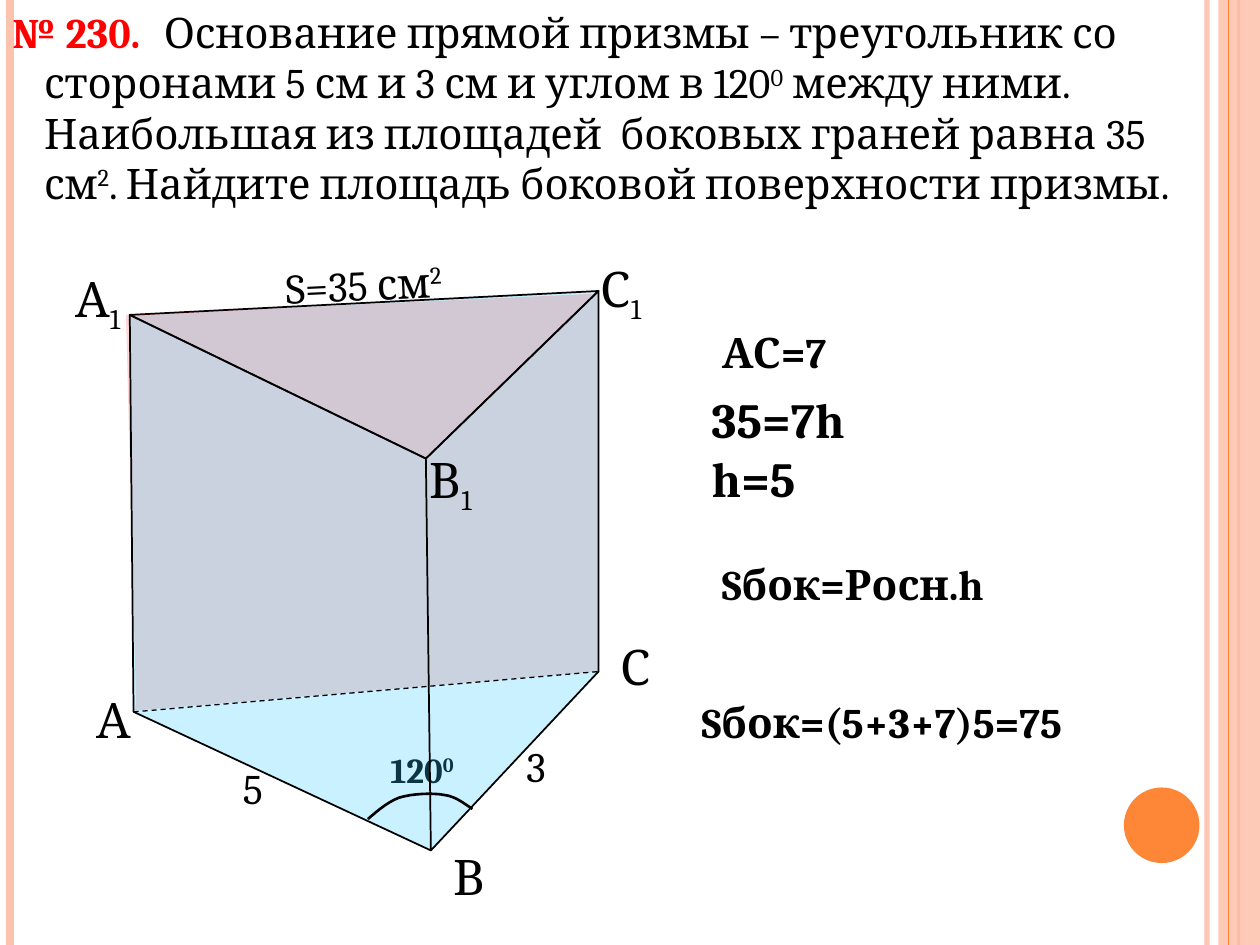
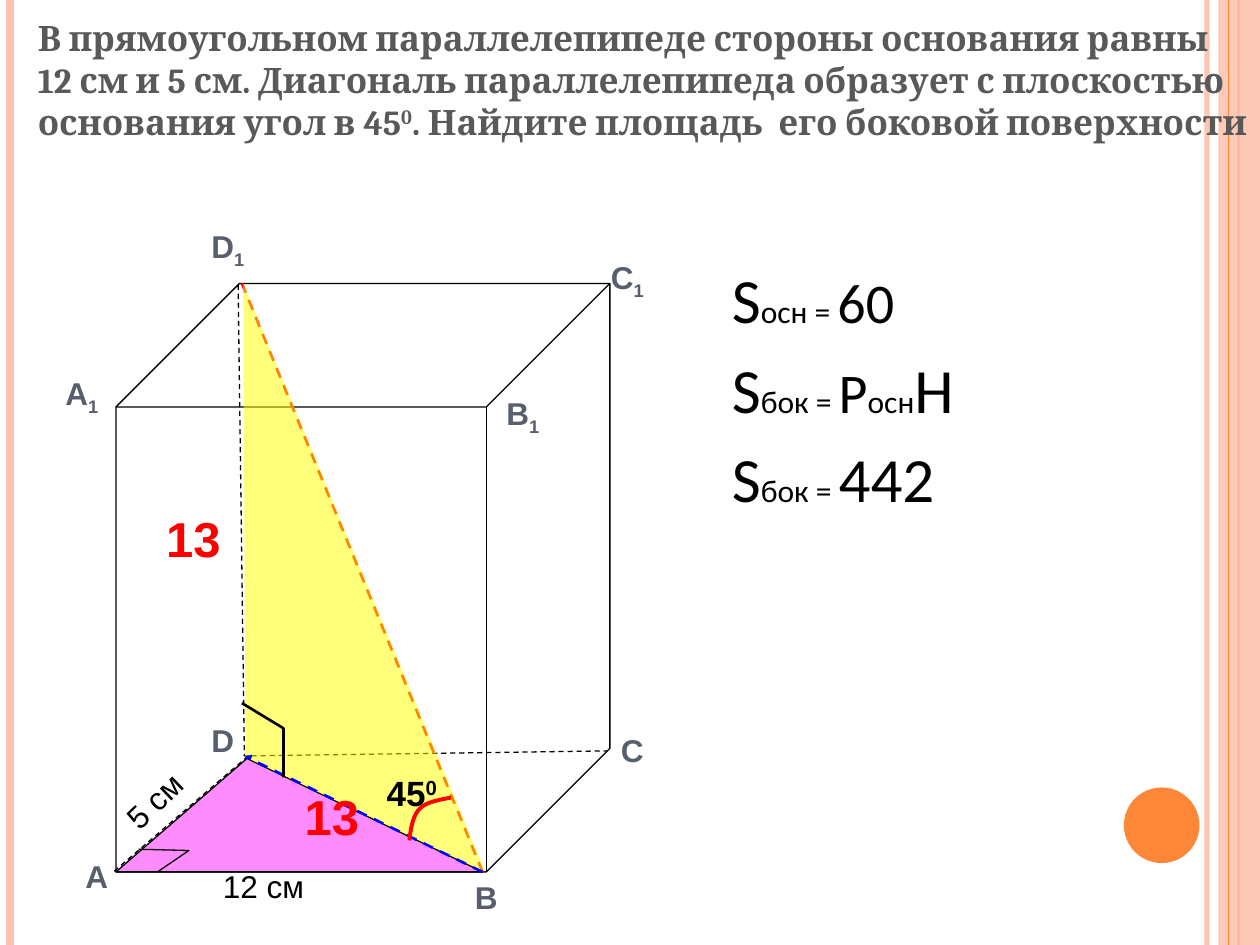
"""Builds two geometry problem slides about the lateral area of prisms."""
from dataclasses import dataclass

import pptx
import pptx.dml.color
import pptx.enum.dml
import pptx.enum.shapes
import pptx.enum.text
import pptx.oxml
import pptx.oxml.ns
import pptx.util

Inches = pptx.util.Inches
SHAPE = pptx.enum.shapes.MSO_SHAPE
SUP, SUB = 30, -25


@dataclass(frozen=True)
class Theme:
    serif: str = "Cambria"
    sans: str = "Arial"
    formula: str = "Calibri"
    ink: str = "000000"
    heading: str = "595959"
    vertex: str = "575F6D"
    accent: str = "FE8637"
    band: str = "FEC3AE"
    red: str = "FF0000"
    blue: str = "0000FF"
    sky: str = "33CCFF"
    magenta: str = "FF00FF"
    yellow: str = "FFFF00"
    small: int = 18
    medium: int = 20
    normal: int = 24
    large: int = 28
    value: int = 32
    symbol: int = 36
    hairline: float = 0.75
    outline: float = 1
    bold_line: float = 1.5
    arc_line: float = 2.25


def bezier(*points, steps=8):
    """Return points along a chain of cubic curves."""
    curve = [points[0]]
    for first in range(0, len(points) - 1, 3):
        a, b, c, d = points[first:first + 4]
        for step in range(1, steps + 1):
            t = step / steps
            weights = ((1 - t) ** 3, 3 * t * (1 - t) ** 2, 3 * t * t * (1 - t), t ** 3)
            curve.append(tuple(sum(w * p[axis] for w, p in zip(weights, (a, b, c, d)))
                               for axis in (0, 1)))
    return curve


class Deck:
    """Holds the theme and the current slide and draws its elements."""

    def __init__(self, theme):
        self.theme = theme
        self.show = pptx.Presentation()
        self.show.slide_width, self.show.slide_height = Inches(10), Inches(7.5)
        self.layout = self.show.slide_layouts.get_by_name("Title Only")
        self.slide = None

    def new_slide(self):
        self.slide = self.show.slides.add_slide(self.layout)

    def paint(self, fill, colour, alpha):
        fill.solid()
        fill.fore_color.rgb = pptx.dml.color.RGBColor.from_string(colour)
        if alpha is not None:
            rgb = fill._xPr.find(".//" + pptx.oxml.ns.qn("a:srgbClr"))
            rgb.append(pptx.oxml.parse_xml(
                f'<a:alpha {pptx.oxml.ns.nsdecls("a")} val="{alpha * 1000}"/>'))

    def style(self, shape, fill=None, alpha=None, line=None, width=None, dash=False):
        shape.shadow.inherit = False
        if fill:
            self.paint(shape.fill, fill, alpha)
        else:
            shape.fill.background()
        self.style_line(shape.line, line, width, dash)
        return shape

    def style_line(self, stroke, colour, width, dash=False, alpha=None):
        if not colour:
            stroke.fill.background()
            return
        self.paint(stroke.fill, colour, alpha)
        stroke.width = pptx.util.Pt(width)
        if dash:
            stroke.dash_style = pptx.enum.dml.MSO_LINE.DASH

    def preset(self, kind, at, **look):
        return self.style(self.slide.shapes.add_shape(kind, *map(Inches, at)), **look)

    def line(self, start, end, colour, width, dash=False, alpha=None):
        connector = self.slide.shapes.add_connector(
            pptx.enum.shapes.MSO_CONNECTOR.STRAIGHT, *map(Inches, start + end))
        self.style_line(connector.line, colour, width, dash, alpha)
        connector.element.spPr.append(
            pptx.oxml.parse_xml(f'<a:effectLst {pptx.oxml.ns.nsdecls("a")}/>'))
        return connector

    def outline(self, points, close=False, **look):
        corners = [(Inches(x), Inches(y)) for x, y in points]
        builder = self.slide.shapes.build_freeform(*corners[0])
        builder.add_line_segments(corners[1:], close=close)
        return self.style(builder.convert_to_shape(), **look)

    def compose(self, paragraph, runs, size, font, colour, bold):
        paragraph.font.name = font
        paragraph.font.size = pptx.util.Pt(size)
        paragraph.font.bold = bold
        paragraph.font.color.rgb = pptx.dml.color.RGBColor.from_string(colour)
        for words, *shift in runs:
            run = paragraph.add_run()
            run.text = words
            if shift:
                run.font._element.set("baseline", str(shift[0] * 1000))

    def title(self, at, runs, size, colour, bold=False, indent=0):
        heading = self.slide.shapes.title
        heading.left, heading.top, heading.width, heading.height = map(Inches, at)
        frame = heading.text_frame
        frame.word_wrap = True
        frame.auto_size = pptx.enum.text.MSO_AUTO_SIZE.NONE
        frame.vertical_anchor = pptx.enum.text.MSO_ANCHOR.TOP
        paragraph = frame.paragraphs[0]
        paragraph.alignment = pptx.enum.text.PP_ALIGN.LEFT
        self.compose(paragraph, runs, size, self.theme.serif, colour, bold)
        paragraph._p.get_or_add_pPr().set("indent", str(Inches(indent)))

    def text(self, at, *lines, size, font=None, colour=None, bold=False,
             wrap=False, rotation=0):
        box = self.slide.shapes.add_textbox(*map(Inches, at))
        box.rotation = rotation
        frame = box.text_frame
        frame.word_wrap = wrap
        frame.auto_size = pptx.enum.text.MSO_AUTO_SIZE.SHAPE_TO_FIT_TEXT
        for number, runs in enumerate(lines):
            paragraph = frame.add_paragraph() if number else frame.paragraphs[0]
            self.compose(paragraph, runs, size, font or self.theme.serif,
                         colour or self.theme.ink, bold)
        return frame

    def formula(self, at, *parts):
        frame = self.text(at, [(words,) for words, _ in parts], wrap=True,
                          size=self.theme.symbol, font=self.theme.formula)
        for run, (_, size) in zip(frame.paragraphs[0].runs, parts):
            run.font.size = pptx.util.Pt(size)

    def stripe(self, x, colour, width, alpha=None):
        return self.line((x, 0), (x, 7.5), colour, width, alpha=alpha)

    def bands(self):
        """Draw the side bands and move them to the shared layout."""
        t = self.theme
        decor = [self.stripe(9.58, t.band, 3, 93), self.stripe(0.08, t.band, 4.5),
                 self.stripe(9.83, t.accent, t.bold_line),
                 self.preset(SHAPE.RECTANGLE, (9.67, 0, 0.33, 7.5), fill=t.band, alpha=87),
                 self.stripe(9.75, t.accent, t.hairline),
                 self.preset(SHAPE.OVAL, (8.92, 6.25, 0.6, 0.6), fill=t.accent)]
        for number, part in enumerate(decor, start=20):
            part.element.xpath(".//p:cNvPr")[0].set("id", str(number))
            self.layout.shapes.element.append(part.element)


def prism_slide(deck):
    """Draw the triangular prism problem."""
    t = deck.theme
    deck.title((0.25, 0, 9.33, 1.72), [
        ("Основание прямой призмы – треугольник со сторонами 5 см и 3 см и углом в 120",),
        ("0", SUP), (" между ними. Наибольшая из площадей  боковых граней равна 35 см",),
        ("2", SUP), (". Найдите площадь боковой поверхности призмы.",)],
        t.normal, t.ink, indent=0.95)
    deck.text((0, 0, 1.31, 0.5), [("№ 230.",)], size=t.normal, colour=t.red, bold=True)

    a, b, c = (1.06, 5.65), (3.42, 6.75), (4.75, 5.33)
    a1, b1, c1 = (1.03, 2.5), (3.38, 3.64), (4.75, 2.31)
    glass = dict(close=True, fill=t.sky, alpha=26, line=t.ink, width=t.outline)
    deck.outline([a1, c1, b1], **glass)
    deck.outline([(1.07, 5.64), c, (4.75, 2.33), (1, 2.5), (1.08, 5.58)],
                 close=True, fill=t.red, alpha=17)
    deck.text((3, 5.89, 0.77, 0.43), [("120",), ("0", SUP)], size=t.medium, bold=True)
    deck.outline([a1, a, b, b1, c1, c, b, b1], **glass)
    deck.outline([a, c], line=t.ink, width=t.hairline, dash=True)
    deck.outline(bezier((2.92, 6.5), (2.96, 6.47), (3.06, 6.37), (3.17, 6.33),
                        (3.27, 6.3), (3.43, 6.29), (3.53, 6.31),
                        (3.62, 6.32), (3.7, 6.39), (3.75, 6.42)),
                 line=t.ink, width=t.bold_line)

    for letter, x, y in (("А", 0.67, 5.42), ("В", 3.5, 6.67), ("С", 4.83, 5)):
        deck.text((x, y, 0.47, 0.57), [(letter,)], size=t.large)
    for letter, x, y in (("А", 0.5, 2.08), ("С", 4.67, 2), ("В", 3.31, 3.52)):
        deck.text((x, y, 0.61, 0.57), [(letter,), ("1", SUB)], size=t.large)
    for side, x, y in (("3", 4.08, 5.83), ("5", 1.83, 6)):
        deck.text((x, y, 0.39, 0.5), [(side,)], size=t.normal)
    deck.text((2.17, 2, 1.6, 0.5), [("S=35 см",), ("2", SUP)], size=t.normal, rotation=357.2)

    for step, x, y, width in (("АС=7", 5.63, 2.54, 1.89), ("Sбок=Росн.h", 5.63, 4.38, 2.68),
                              ("Sбок=(5+3+7)5=75", 5.47, 5.48, 3.54)):
        deck.text((x, y, width, 0.51), [(step,)], size=t.normal, bold=True, wrap=True)
    deck.text((5.55, 3.04, 1.49, 1.04), [("35=7h",)], [("h=5",)],
              size=t.large, bold=True, wrap=True)


def box_slide(deck):
    """Draw the rectangular parallelepiped problem."""
    t = deck.theme
    deck.title((0.2, 0.08, 9.8, 1.45), [
        ("В прямоугольном параллелепипеде стороны основания равны 12 см и 5 см. "
         "Диагональ параллелепипеда образует с плоскостью основания угол в 45",),
        ("0", SUP), (". Найдите площадь  его боковой поверхности",)],
        t.medium, t.heading, bold=True)

    a, b, d, d1 = (0.92, 6.92), (3.83, 6.92), (1.96, 6.02), (1.92, 2.25)
    thin = dict(line=t.ink, width=t.hairline)
    deck.outline([b, d, a], close=True, fill=t.magenta, alpha=45, **thin)
    deck.preset(SHAPE.CUBE, (0.92, 2.25, 3.92, 4.67), **thin).adjustments[0] = 0.25
    deck.outline([(1.89, 2.26), (1.94, 6), (4.82, 5.96)], dash=True, **thin)
    deck.line(b, d1, t.red, t.bold_line, dash=True)
    deck.outline([(3.85, 6.92), (1.95, 6.01), (1.93, 2.25)],
                 close=True, fill=t.yellow, alpha=52)
    deck.outline([(1.97, 6), (0.9, 6.92)], dash=True, **thin)
    deck.outline([b, (1.96, 6.01), (2, 6)], line=t.blue, width=t.bold_line, dash=True)
    deck.outline(bezier((3.58, 6.33), (3.49, 6.35), (3.39, 6.36), (3.33, 6.42),
                        (3.28, 6.47), (3.26, 6.57), (3.25, 6.67)),
                 line=t.red, width=t.arc_line)
    deck.outline([(1.1, 6.74), (1.5, 6.75), (1.25, 6.92)], **thin)
    deck.outline([(1.92, 5.58), (2.25, 5.78), (2.25, 6.17)], line=t.ink, width=t.bold_line)

    bottom = (("В", 3.67, 6.92), ("С", 4.83, 5.75), ("D", 1.58, 5.67), ("А", 0.58, 6.75))
    top = (("А", 0.42, 2.92), ("D", 1.58, 1.75), ("С", 4.75, 2), ("В", 3.92, 3.08))
    for corners, index in ((bottom, []), (top, [("1", SUB)])):
        for letter, x, y in corners:
            deck.text((x, y, 0.67, 0.5), [(letter,)] + index, size=t.small,
                      font=t.sans, colour=t.vertex, bold=True, wrap=True)

    deck.text((1.67, 6.83, 1.06, 0.5), [("12 см",)], size=t.small, font=t.sans)
    deck.text((0.88, 6.08, 0.88, 0.5), [("5 см",)], size=t.small, font=t.sans, rotation=316.2)
    deck.text((2.97, 6.07, 0.61, 0.43), [("45",), ("0", SUP)],
              size=t.medium, font=t.sans, bold=True)
    for x, y in ((1.22, 3.99), (2.32, 6.19)):
        deck.text((x, y, 0.64, 0.57), [("13",)], size=t.large, font=t.sans,
                  colour=t.red, bold=True, wrap=True)

    area, lateral = ("S", t.symbol), ("бок = ", t.small)
    solution = ([area, ("осн = ", t.small), ("60", t.value)],
                [area, lateral, ("Р", t.value), ("осн", t.small), ("Н", t.symbol)],
                [area, lateral, ("442", t.symbol)])
    for row, parts in enumerate(solution):
        deck.formula((5.71, 2.02 + 0.71 * row, 3.23, 0.71), *parts)


def main():
    """Build both slides and save them."""
    deck = Deck(Theme())
    deck.new_slide()
    deck.bands()
    prism_slide(deck)
    deck.new_slide()
    box_slide(deck)
    deck.show.save("out.pptx")


if __name__ == "__main__":
    main()
